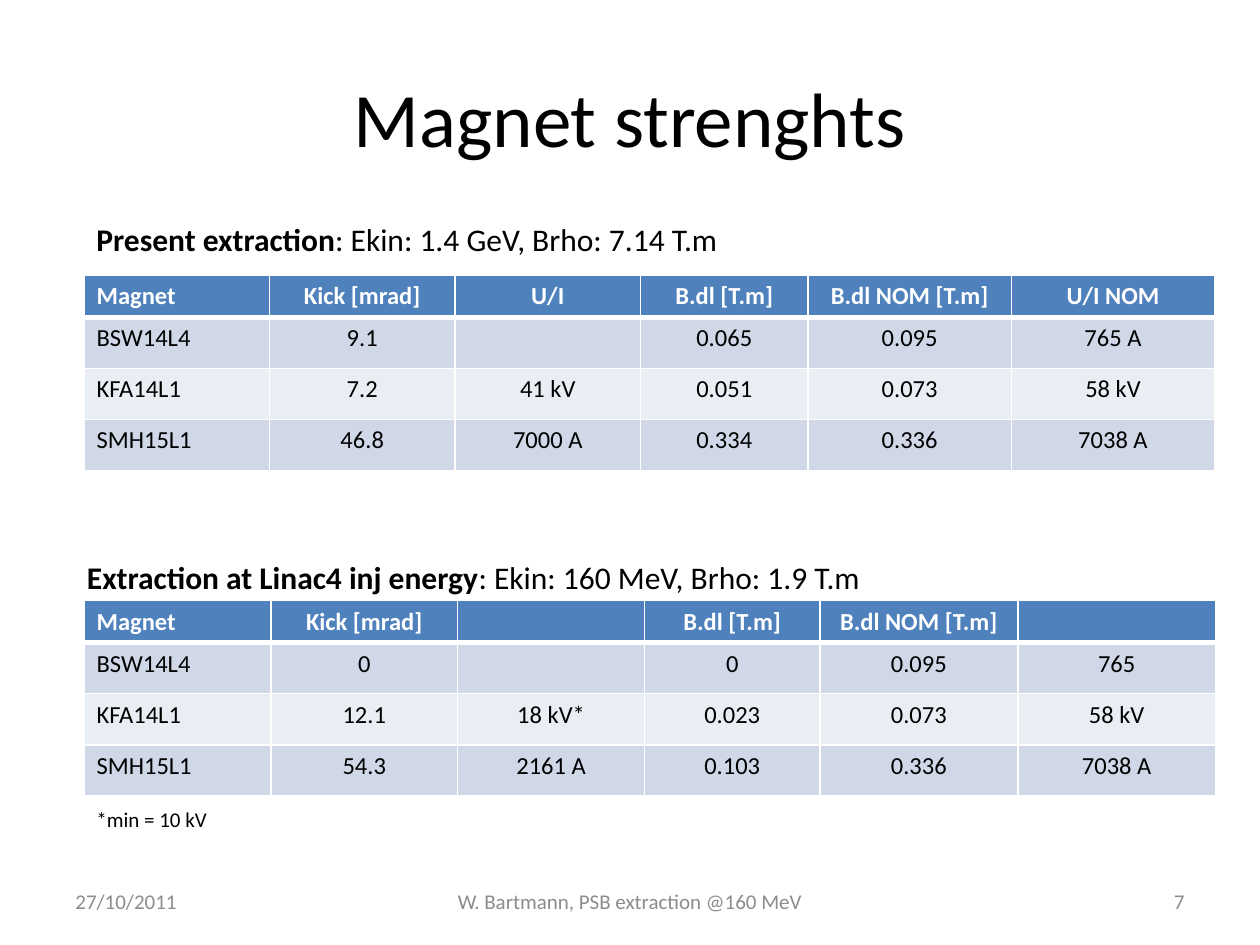
from lxml.etree import SubElement
from pptx import Presentation
from pptx.dml.color import RGBColor
from pptx.enum.text import MSO_ANCHOR, PP_ALIGN
from pptx.oxml.ns import qn
from pptx.util import Inches, Pt

BLACK = RGBColor(0x00, 0x00, 0x00)
WHITE = RGBColor(0xFF, 0xFF, 0xFF)
GREY = RGBColor(0x8C, 0x8C, 0x8C)
HEADER_BLUE = RGBColor(0x4F, 0x81, 0xBD)
BANDS = (RGBColor(0xE9, 0xED, 0xF4), RGBColor(0xD0, 0xD8, 0xE8))

# The slide is a grid of 120 columns by 90 rows
WIDTH, HEIGHT = Inches(10), Inches(7.5)
COLUMN, ROW = WIDTH / 120, HEIGHT / 90
TABLE_LEFT = 8
HEADER_ROW, BODY_ROW = 4, 4.87

PRESENT_COLUMNS = [17.67] * 3 + [15.95] + [19.37] * 2
PRESENT_MAGNETS = [
    ["Magnet", "Kick [mrad]", "U/I", "B.dl [T.m]", "B.dl NOM [T.m]", "U/I NOM"],
    ["BSW14L4", "9.1", "", "0.065", "0.095", "765 A"],
    ["KFA14L1", "7.2", "41 kV", "0.051", "0.073", "58 kV"],
    ["SMH15L1", "46.8", "7000 A", "0.334", "0.336", "7038 A"],
]
LINAC4_COLUMNS = [17.8] * 3 + [16.7] + [18.85] * 2
LINAC4_MAGNETS = [
    ["Magnet", "Kick [mrad]", "", "B.dl [T.m]", "B.dl NOM [T.m]", ""],
    ["BSW14L4", "0", "", "0", "0.095", "765"],
    ["KFA14L1", "12.1", "18 kV*", "0.023", "0.073", "58 kV"],
    ["SMH15L1", "54.3", "2161 A", "0.103", "0.336", "7038 A"],
]


def grid_box(left, top, width, height):
    return (round(left * COLUMN), round(top * ROW),
            round(width * COLUMN), round(height * ROW))


class SlideBuilder:
    font_name = "Calibri"

    def __init__(self, slide):
        self.slide = slide

    def add_run(self, paragraph, text, size, color=BLACK, bold=False):
        run = paragraph.add_run()
        run.text = text
        run.font.name = self.font_name
        run.font.size = Pt(size)
        run.font.bold = bold
        run.font.color.rgb = color

    def title(self, text, box):
        shape = self.slide.shapes.title
        shape.left, shape.top, shape.width, shape.height = grid_box(*box)
        shape.text_frame.vertical_anchor = MSO_ANCHOR.MIDDLE
        paragraph = shape.text_frame.paragraphs[0]
        paragraph.alignment = PP_ALIGN.CENTER
        self.add_run(paragraph, text, 44)

    def text(self, runs, box, size, color=BLACK, align=PP_ALIGN.LEFT,
             anchor=MSO_ANCHOR.TOP):
        """Add a text box; runs is a list of (text, bold) pairs."""
        frame = self.slide.shapes.add_textbox(*grid_box(*box)).text_frame
        frame.word_wrap = True
        frame.vertical_anchor = anchor
        paragraph = frame.paragraphs[0]
        paragraph.alignment = align
        for text, bold in runs:
            self.add_run(paragraph, text, size, color, bold)

    def borders(self, cell, top, bottom):
        properties = cell._tc.get_or_add_tcPr()
        widths = {"a:lnL": 1, "a:lnR": 1, "a:lnT": top, "a:lnB": bottom}
        for position, (tag, width) in enumerate(widths.items()):
            line = SubElement(properties, qn(tag), w=str(Pt(width)))
            fill = SubElement(line, qn("a:solidFill"))
            SubElement(fill, qn("a:srgbClr"), val=str(WHITE))
            properties.insert(position, line)

    def cell(self, cell, text, row, column):
        header = row == 0
        cell.fill.solid()
        cell.fill.fore_color.rgb = HEADER_BLUE if header else BANDS[row % 2]
        self.borders(cell, top=3 if row == 1 else 1, bottom=3 if header else 1)
        paragraph = cell.text_frame.paragraphs[0]
        paragraph.alignment = PP_ALIGN.CENTER if column else PP_ALIGN.LEFT
        if text:
            self.add_run(paragraph, text, 14, WHITE if header else BLACK, header)
        else:
            # Keeps an empty cell from stretching its row
            SubElement(paragraph._p, qn("a:endParaRPr"), sz="1400")

    def table(self, rows, column_widths, top):
        heights = [HEADER_ROW] + [BODY_ROW] * (len(rows) - 1)
        box = grid_box(TABLE_LEFT, top, sum(column_widths), sum(heights))
        table = self.slide.shapes.add_table(
            len(rows), len(column_widths), *box).table
        for column, width in zip(table.columns, column_widths):
            column.width = round(width * COLUMN)
        for row_index, (values, height) in enumerate(zip(rows, heights)):
            table.rows[row_index].height = round(height * ROW)
            for column_index, value in enumerate(values):
                self.cell(table.cell(row_index, column_index), value,
                          row_index, column_index)

    def footer(self, text, left, width, align):
        self.text([(text, False)], (left, 83.4, width, 4.8), 12, GREY, align,
                  MSO_ANCHOR.MIDDLE)


def main():
    presentation = Presentation()
    presentation.slide_width, presentation.slide_height = WIDTH, HEIGHT
    title_only = presentation.slide_layouts[5]
    builder = SlideBuilder(presentation.slides.add_slide(title_only))

    builder.title("Magnet strenghts", (6, 3.6, 108, 15))

    # Present extraction
    builder.text([("Present extraction", True),
                  (": Ekin: 1.4 GeV, Brho: 7.14 T.m", False)],
                 (TABLE_LEFT, 20.4, 63.4, 4.8), 18)
    builder.table(PRESENT_MAGNETS, PRESENT_COLUMNS, 26.2)

    # Extraction at Linac4 energy
    builder.text([("Extraction at Linac4 inj energy", True),
                  (": Ekin: 160 MeV, Brho: 1.9 T.m", False)],
                 (7.1, 52.6, 106.8, 4.8), 18)
    builder.table(LINAC4_MAGNETS, LINAC4_COLUMNS, 57.2)
    builder.text([("*min = 10 kV", False)], (TABLE_LEFT, 76.2, 20.8, 3.6), 12)

    # Footer
    builder.footer("27/10/2011", 6, 28, PP_ALIGN.LEFT)
    builder.footer("W. Bartmann, PSB extraction @160 MeV", 41, 38,
                   PP_ALIGN.CENTER)
    builder.footer("7", 86, 28, PP_ALIGN.RIGHT)

    presentation.save("out.pptx")


if __name__ == "__main__":
    main()
